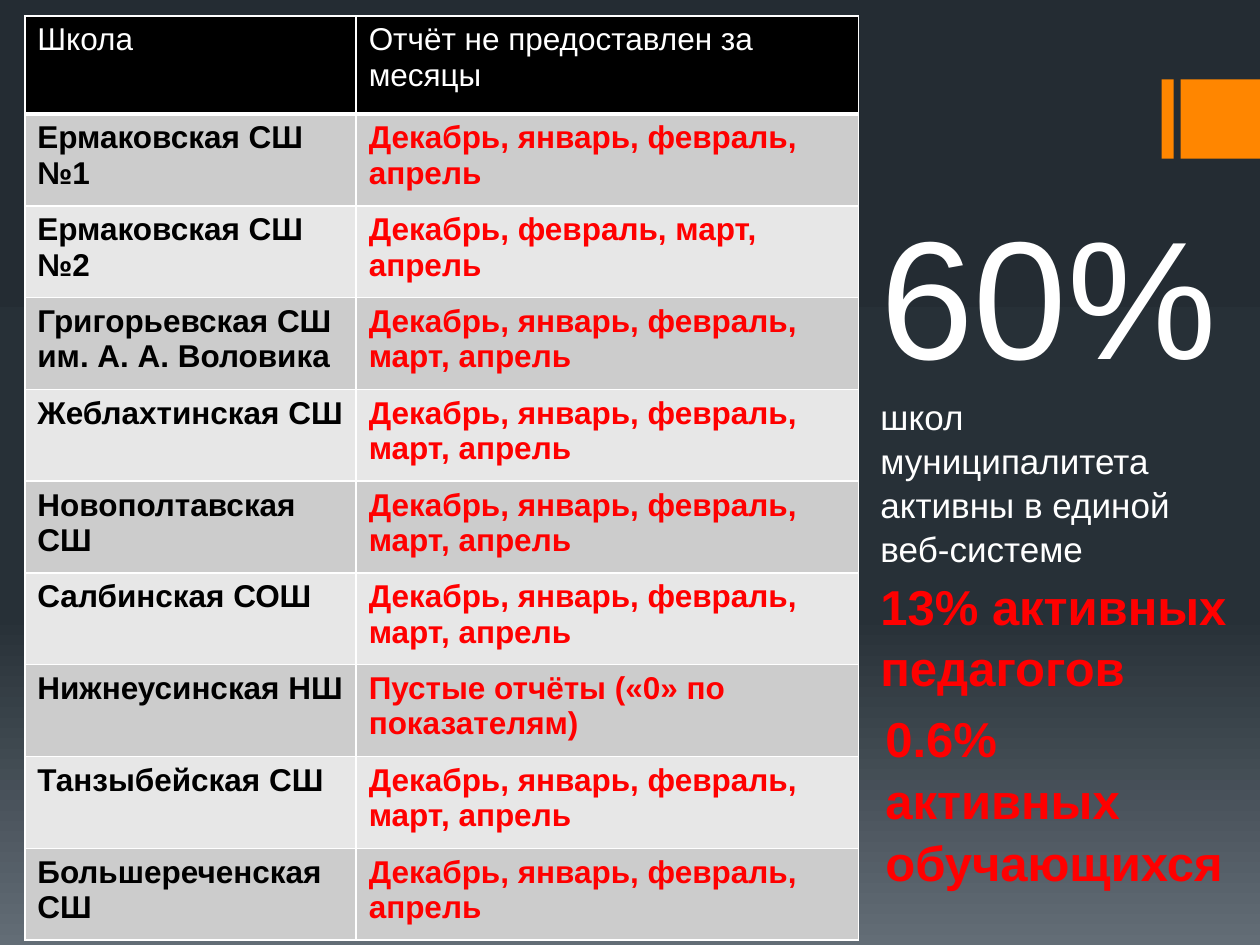
from copy import deepcopy

from lxml.etree import SubElement as Sub
from pptx import Presentation
from pptx.dml.color import RGBColor as RGB
from pptx.enum.shapes import MSO_SHAPE as Kind
from pptx.enum.text import MSO_AUTO_SIZE as Auto
from pptx.oxml.ns import qn
from pptx.util import Cm, Pt

WHITE = RGB(0xFF, 0xFF, 0xFF)
BLACK = RGB(0, 0, 0)
RED = RGB(0xFF, 0, 0)
ORANGE = RGB(0xFF, 0x86, 0)
DARK = RGB(0xCC, 0xCC, 0xCC)
LIGHT = RGB(0xE7, 0xE7, 0xE7)
SKY = [(0, RGB(0x24, 0x2C, 0x33)), (0.65, RGB(0x27, 0x30, 0x37)),
       (1, RGB(0x63, 0x6D, 0x76))]

ALL = "Декабрь, январь, февраль, март, апрель"
MOST = "Декабрь, январь, февраль, апрель"
HEAD = ("Школа", "Отчёт не предоставлен за месяцы")
ROWS = [
    ("Ермаковская СШ №1", MOST),
    ("Ермаковская СШ №2", "Декабрь, февраль, март, апрель"),
    ("Григорьевская СШ им. А. А. Воловика", ALL),
    ("Жеблахтинская СШ", ALL),
    ("Новополтавская СШ", ALL),
    ("Салбинская СОШ", ALL),
    ("Нижнеусинская НШ", "Пустые отчёты («0» по показателям)"),
    ("Танзыбейская СШ", ALL),
    ("Большереченская СШ", MOST),
]


class Deck:
    """Holds the font, the line spacing and the current slide."""

    face = "Arial"
    lead = 1.05

    def __init__(self, slide):
        self.slide = slide

    def back(self, stops):
        fill = self.slide.background.fill
        fill.gradient()
        fill.gradient_angle = 270
        first = self.slide.element.find(".//" + qn("a:gs"))
        for _ in stops[2:]:
            first.addnext(deepcopy(first))
        for stop, (pos, tint) in zip(fill.gradient_stops, stops):
            stop.position = pos
            stop.color.rgb = tint

    def bar(self, left, top, wide, high, tint):
        bar = self.slide.shapes.add_shape(
            Kind.RECTANGLE, Cm(left), Cm(top), Cm(wide), Cm(high))
        bar.shadow.inherit = False
        bar.fill.solid()
        bar.fill.fore_color.rgb = tint
        bar.line.fill.background()

    def style(self, para, size, tint, bold):
        font = para.font
        font.name, font.size, font.bold = self.face, Pt(size), bold
        font.color.rgb = tint

    def text(self, left, top, wide, high, lines, tint, bold=False):
        """Add a text box; lines are pairs of words and point size."""
        box = self.slide.shapes.add_textbox(
            Cm(left), Cm(top), Cm(wide), Cm(high))
        frame = box.text_frame
        frame.word_wrap = True
        frame.auto_size = Auto.SHAPE_TO_FIT_TEXT
        frame.text = "\n".join(words for words, _ in lines)
        for para, (_, size) in zip(frame.paragraphs, lines):
            para.line_spacing = self.lead
            self.style(para, size, tint, bold)

    def edge(self, cell, foot):
        """Draw white borders, the bottom one foot points wide."""
        props = cell._tc.get_or_add_tcPr()
        for i, (side, wide) in enumerate(zip("LRTB", (1, 1, 1, foot))):
            line = props.makeelement(qn("a:ln" + side), {"w": str(Pt(wide))})
            Sub(Sub(line, qn("a:solidFill")), qn("a:srgbClr"), val=str(WHITE))
            props.insert(i, line)

    def cell(self, cell, words, fill, tint, bold, foot):
        cell.text = words
        cell.fill.solid()
        cell.fill.fore_color.rgb = fill
        self.style(cell.text_frame.paragraphs[0], 18, tint, bold)
        self.edge(cell, foot)

    def table(self, left, top, wides, highs, head, rows):
        grid = self.slide.shapes.add_table(
            len(highs), len(wides), Cm(left), Cm(top),
            Cm(sum(wides)), Cm(sum(highs))).table
        for col, wide in zip(grid.columns, wides):
            col.width = Cm(wide)
        for row, high in zip(grid.rows, highs):
            row.height = Cm(high)
        for c, words in enumerate(head):
            self.cell(grid.cell(0, c), words, BLACK, WHITE, False, 3)
        for r, row in enumerate(rows, 1):
            fill = DARK if r % 2 else LIGHT
            for c, (words, tint) in enumerate(zip(row, (BLACK, RED))):
                self.cell(grid.cell(r, c), words, fill, tint, True, 1)


def main():
    prs = Presentation()
    prs.slide_width, prs.slide_height = Cm(25.4), Cm(19.05)
    deck = Deck(prs.slides.add_slide(prs.slide_layouts[6]))
    deck.back(SKY)
    deck.bar(23.42, 1.6, 0.24, 1.6, ORANGE)
    deck.bar(23.8, 1.6, 1.6, 1.6, ORANGE)
    deck.table(0.5, 0.32, [6.68, 10.13], [1.98] + [1.85] * len(ROWS),
               HEAD, ROWS)
    deck.text(17.5, 3.53, 7.7, 7.77,
              [("60%", 96), ("школ муниципалитета", 20),
               ("активны в единой веб-системе", 20)], WHITE)
    deck.text(17.5, 11.43, 7.8, 2.64,
              [("13% активных педагогов", 28)], RED, True)
    deck.text(17.6, 14.1, 7.8, 3.84,
              [("0.6%", 28), ("активных", 28), ("обучающихся", 28)],
              RED, True)
    prs.save("out.pptx")


if __name__ == "__main__":
    main()
